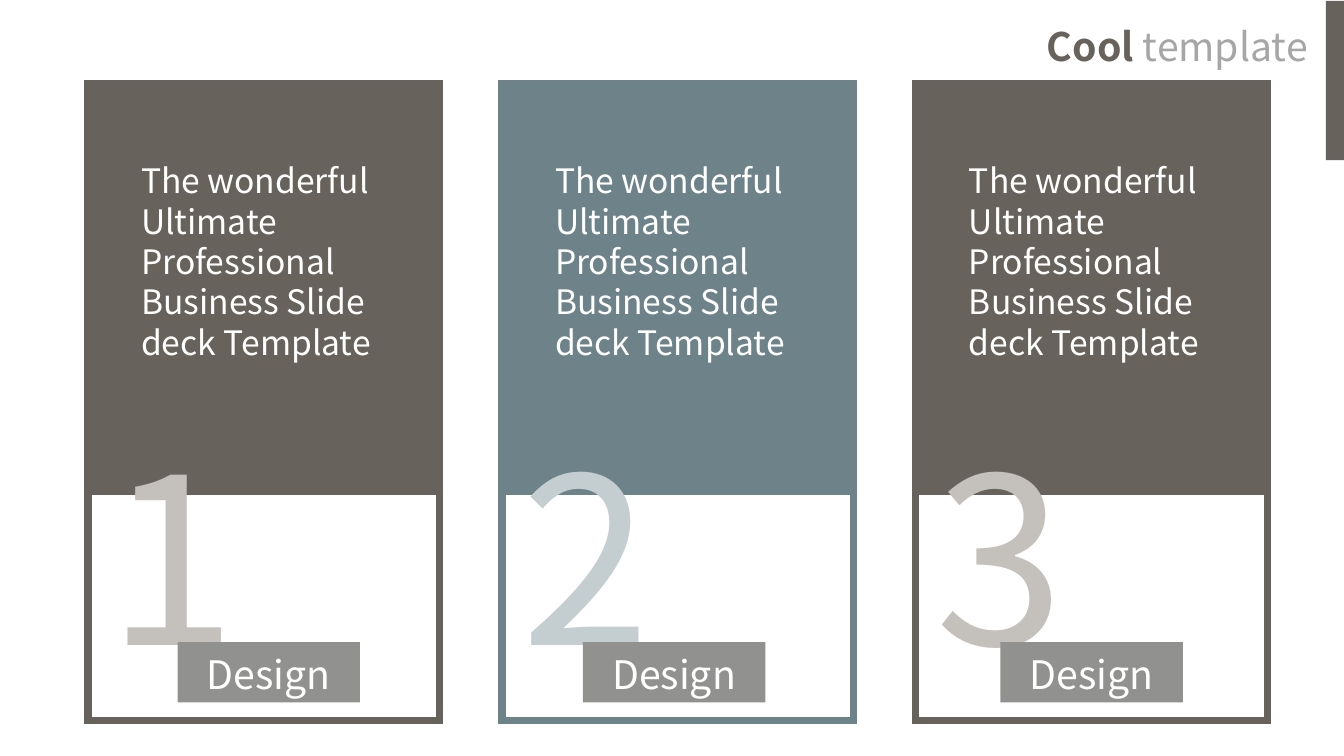
from dataclasses import dataclass

from lxml.etree import SubElement
from pptx import Presentation
from pptx.dml.color import RGBColor
from pptx.enum.shapes import MSO_SHAPE
from pptx.enum.text import MSO_ANCHOR, MSO_AUTO_SIZE, PP_ALIGN
from pptx.oxml.ns import qn
from pptx.shapes.autoshape import Shape
from pptx.slide import Slide
from pptx.util import Inches, Pt

WIDTH, HEIGHT = Inches(13.33), Inches(7.5)
LEFT, PITCH = 6.53, 30.8


@dataclass(frozen=True)
class Theme:
    font: str = "Noto Sans CJK JP"
    brown: str = "67625B"
    teal: str = "6D8289"
    sand: str = "C4C0BC"
    mist: str = "C4CDD0"
    gray: str = "919190"
    pale: str = "A6A6A6"
    white: str = "FFFFFF"
    digit: int = 166
    head: int = 28
    body: int = 24
    edge: float = 5.5


@dataclass(frozen=True)
class Box:
    """A frame in percent of the slide's width and height."""
    x: float
    y: float
    w: float
    h: float

    def shift(self, step: float) -> "Box":
        return Box(self.x + step, self.y, self.w, self.h)

    def frame(self) -> tuple[int, int, int, int]:
        return (int(WIDTH * self.x / 100), int(HEIGHT * self.y / 100),
                int(WIDTH * self.w / 100), int(HEIGHT * self.h / 100))


@dataclass(frozen=True)
class Run:
    text: str
    size: int
    color: str
    bold: bool = False


@dataclass(frozen=True)
class Card:
    color: str
    tint: str
    tag: float


THEME = Theme()
TEXT = "The wonderful Ultimate Professional Business Slide deck Template"
CARDS = (
    Card(THEME.brown, THEME.sand, 6.68),
    Card(THEME.teal, THEME.mist, 6.04),
    Card(THEME.brown, THEME.sand, 6.3),
)
# Frames within a card, measured from its left edge
PANEL = Box(0, 11.07, 26.18, 53.6)
BASE = Box(0, 64.93, 26.18, 30.4)
DIGIT = Box(0.75, 54, 12.38, 38.53)
TAG = Box(0, 84.93, 13.58, 8)
BODY = Box(3.23, 20.53, 19.8, 33.6)
# Frames on the slide
BAR = Box(98.65, 0.13, 1.35, 21.07)
TITLE = Box(76.07, 2.27, 21.98, 7.6)


def add_rect(slide: Slide, box: Box, fill: str, edge: str | None = None) -> Shape:
    rect = slide.shapes.add_shape(MSO_SHAPE.RECTANGLE, *box.frame())
    rect.shadow.inherit = False
    rect.fill.solid()
    rect.fill.fore_color.rgb = RGBColor.from_string(fill)
    if edge:
        rect.line.color.rgb = RGBColor.from_string(edge)
        rect.line.width = Pt(THEME.edge)
        # Square corners on the thick outline
        SubElement(rect.element.spPr.find(qn("a:ln")), qn("a:miter"), lim="800000")
    else:
        rect.line.fill.background()
    return rect


def write(shape: Shape, *runs: Run, align: PP_ALIGN = PP_ALIGN.LEFT,
          wrap: bool = True) -> None:
    frame = shape.text_frame
    frame.word_wrap = wrap
    frame.auto_size = MSO_AUTO_SIZE.SHAPE_TO_FIT_TEXT
    frame.vertical_anchor = MSO_ANCHOR.TOP
    line = frame.paragraphs[0]
    line.alignment = align
    for part in runs:
        run = line.add_run()
        run.text = part.text
        run.font.name = THEME.font
        run.font.size = Pt(part.size)
        run.font.bold = part.bold
        run.font.color.rgb = RGBColor.from_string(part.color)


def add_text(slide: Slide, box: Box, run: Run, wrap: bool = True) -> None:
    write(slide.shapes.add_textbox(*box.frame()), run, wrap=wrap)


def add_card(slide: Slide, place: int, card: Card) -> None:
    left = LEFT + place * PITCH
    add_rect(slide, PANEL.shift(left), card.color, card.color)
    add_rect(slide, BASE.shift(left), THEME.white, card.color)
    add_text(slide, DIGIT.shift(left),
             Run(str(place + 1), THEME.digit, card.tint), wrap=False)
    add_text(slide, BODY.shift(left), Run(TEXT, THEME.body, THEME.white))
    tag = add_rect(slide, TAG.shift(left + card.tag), THEME.gray)
    tag.text_frame.margin_top = Inches(0.08)
    write(tag, Run("Design", THEME.head, THEME.white), align=PP_ALIGN.CENTER)


def add_title(slide: Slide) -> None:
    title = slide.shapes.title
    title.left, title.top, title.width, title.height = TITLE.frame()
    write(title, Run("Cool ", THEME.head, THEME.brown, True),
          Run("template", THEME.head, THEME.pale),
          align=PP_ALIGN.RIGHT, wrap=False)


def main() -> None:
    deck = Presentation()
    deck.slide_width, deck.slide_height = WIDTH, HEIGHT
    slide = deck.slides.add_slide(deck.slide_layouts.get_by_name("Title Only"))
    add_title(slide)
    for place, card in enumerate(CARDS):
        add_card(slide, place, card)
    add_rect(slide, BAR, THEME.brown)
    deck.save("out.pptx")


if __name__ == "__main__":
    main()
